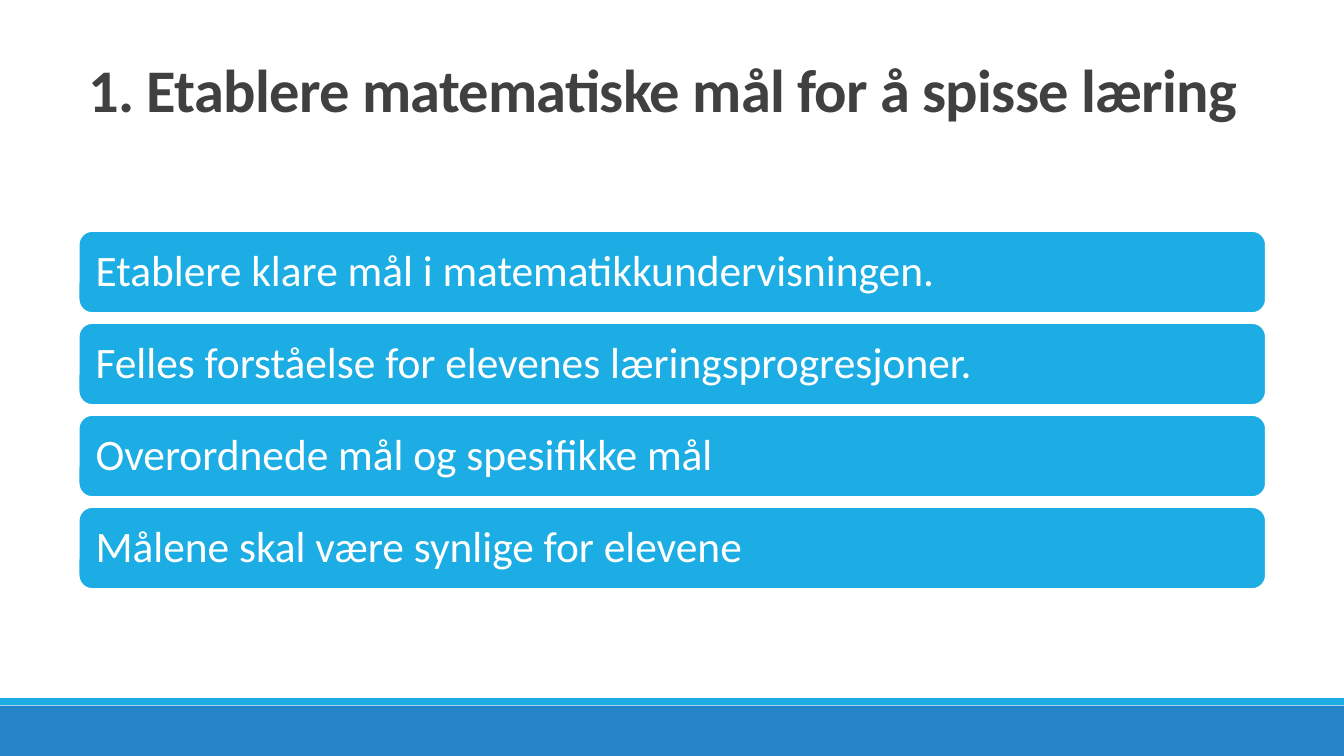
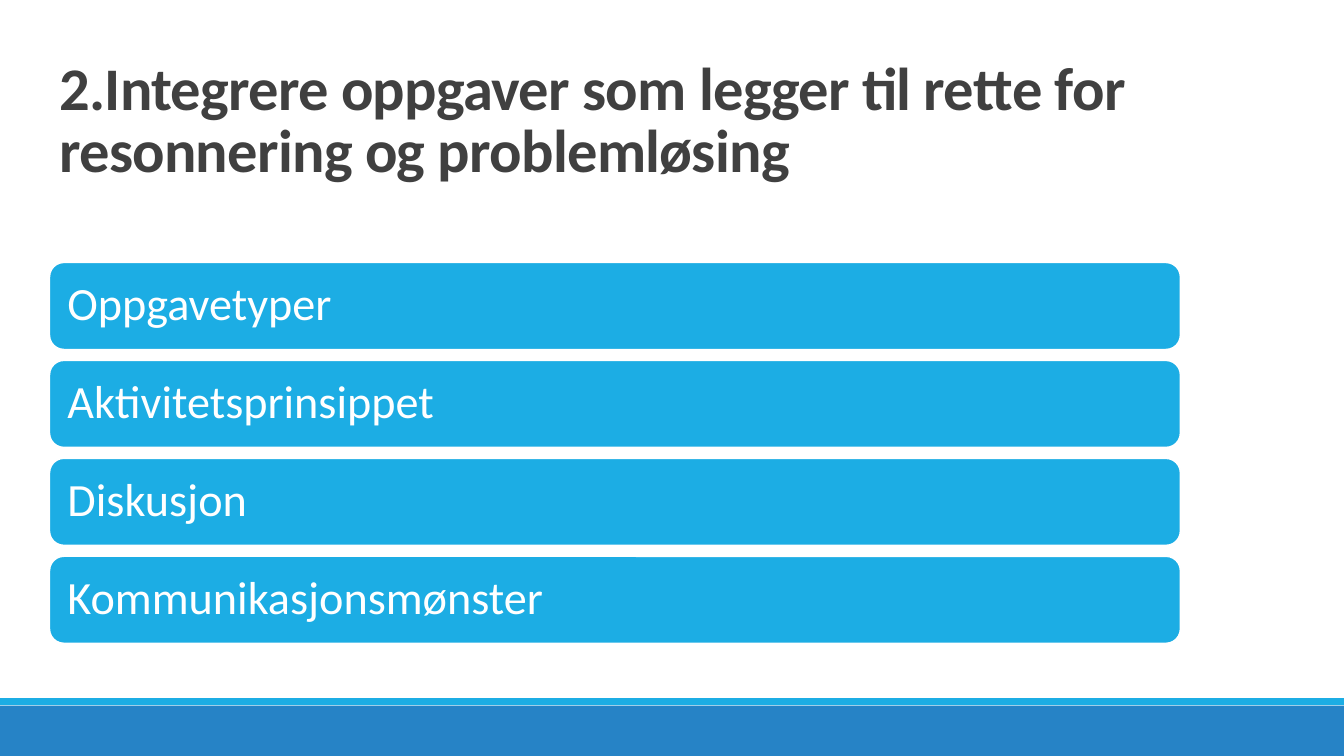
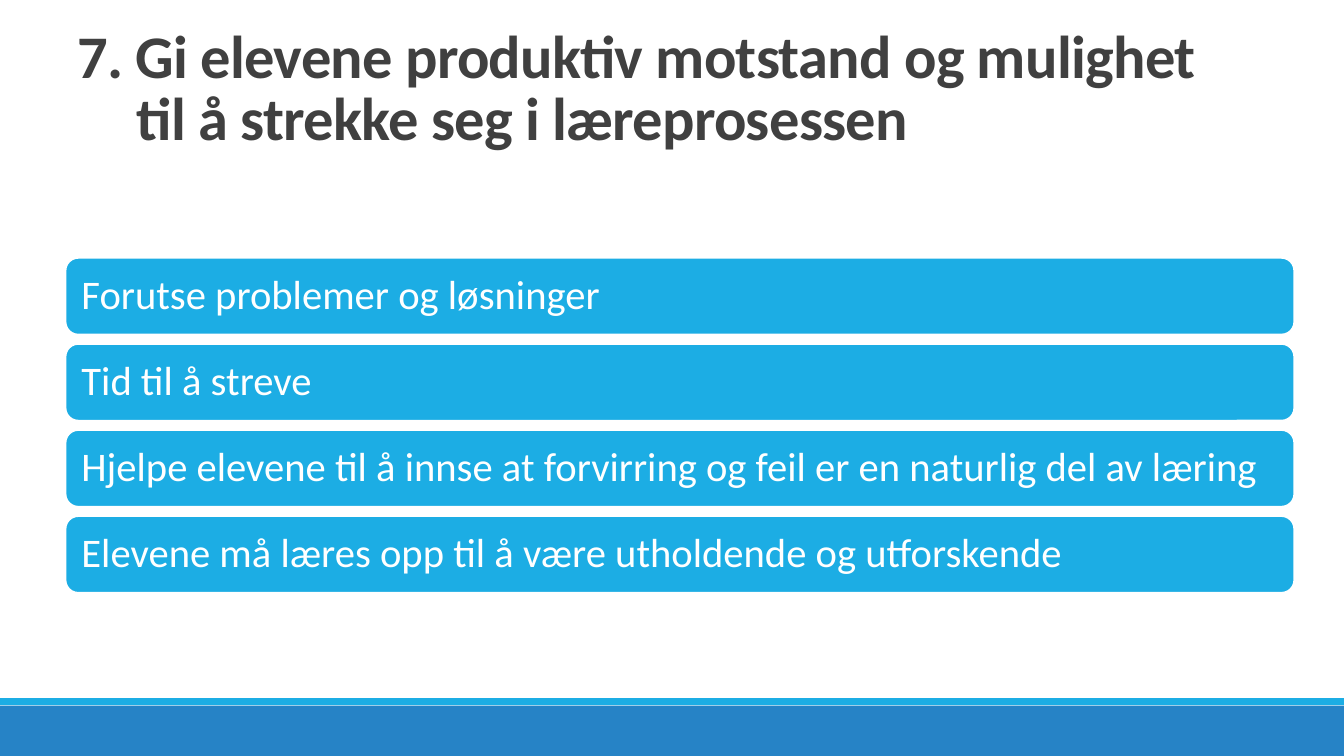
import pptx
import pptx.dml.color
import pptx.enum.shapes
import pptx.enum.text
import pptx.util

Pt = pptx.util.Pt
RGBColor = pptx.dml.color.RGBColor
Shape = pptx.enum.shapes.MSO_SHAPE
Anchor = pptx.enum.text.MSO_ANCHOR
Align = pptx.enum.text.PP_ALIGN

SKY = RGBColor(0x1C, 0xAD, 0xE4)
BLUE = RGBColor(0x26, 0x83, 0xC6)
GREY = RGBColor(0x40, 0x40, 0x40)
WHITE = RGBColor(0xFF, 0xFF, 0xFF)
FONT = "Calibri"
PAGE_WIDTH, PAGE_HEIGHT = 960, 540

# Title box: left, top, width, height; bars: left, top, width.
SLIDES = [
    {
        "title": "1. Etablere matematiske mål for å spisse læring",
        "title_box": (56.2, 43.9, 904, 98.7),
        "bars_box": (56.2, 165, 848),
        "size": 31,
        "bars": [
            "Etablere klare mål i matematikkundervisningen.",
            "Felles forståelse for elevenes læringsprogresjoner.",
            "Overordnede mål og spesifikke mål",
            "Målene skal være synlige for elevene",
        ],
    },
    {
        "title": "2.Integrere oppgaver som legger til rette for "
                 "resonnering og problemløsing",
        "title_box": (35.3, 70.6, 849.6, 114.5),
        "bars_box": (35.3, 187.4, 808),
        "size": 33,
        "bars": [
            "Oppgavetyper",
            "Aktivitetsprinsippet",
            "Diskusjon",
            "Kommunikasjonsmønster",
        ],
    },
    {
        "title": "7. Gi elevene produktiv motstand og mulighet "
                 "til å strekke seg i læreprosessen",
        "title_box": (48.2, 84.2, 852.5, 78.5),
        "title_indent": 42.5,
        "bars_box": (46.8, 184.2, 877.7),
        "size": 29,
        "bars": [
            "Forutse problemer og løsninger",
            "Tid til å streve",
            "Hjelpe elevene til å innse at forvirring og feil "
            "er en naturlig del av læring",
            "Elevene må læres opp til å være utholdende og utforskende",
        ],
    },
]


def add_block(page, kind, box, fill):
    block = page.shapes.add_shape(kind, *map(Pt, box))
    block.shadow.inherit = False
    block.fill.solid()
    block.fill.fore_color.rgb = fill
    block.line.fill.background()
    return block


def set_font(para, size, colour, bold=False):
    font = para.font
    font.name, font.size, font.bold = FONT, Pt(size), bold
    font.color.rgb = colour


def set_margins(frame, left, top, right, bottom):
    frame.margin_left, frame.margin_top = Pt(left), Pt(top)
    frame.margin_right, frame.margin_bottom = Pt(right), Pt(bottom)


def add_footer_bands(page):
    add_block(page, Shape.RECTANGLE, (0, 504, PAGE_WIDTH, 36), BLUE)
    add_block(page, Shape.RECTANGLE, (0, 498.76, PAGE_WIDTH, 5.04), SKY)


def add_title(page, text, box, indent=0):
    """Bottom-anchored title, raised one line above the foot of its box."""
    frame = page.shapes.add_textbox(*map(Pt, box)).text_frame
    frame.word_wrap = True
    frame.vertical_anchor = Anchor.BOTTOM
    set_margins(frame, 7.2, 3.6, 7.2, 53.4)
    para = frame.paragraphs[0]
    para.line_spacing = 0.85
    set_font(para, 43.2, GREY, bold=True)
    if indent:
        properties = para._p.get_or_add_pPr()
        properties.set("marL", str(Pt(indent)))
        properties.set("indent", str(-Pt(indent)))
    span = para.add_run()
    span.text = text
    span._r.get_or_add_rPr().set("spc", "-50")


def add_bars(page, texts, box, size):
    """Stack of equal bars whose height, gap and padding follow the text size."""
    left, top, width = box
    height, gap, padding = 1.89 * size, 0.23 * size, 0.3 * size
    for row, text in enumerate(texts):
        bar_box = (left, top + row * (height + gap), width, height)
        bar = add_block(page, Shape.ROUNDED_RECTANGLE, bar_box, SKY)
        bar.line.color.rgb = WHITE
        bar.line.width = Pt(1.25)
        frame = bar.text_frame
        frame.word_wrap = True
        frame.vertical_anchor = Anchor.MIDDLE
        set_margins(frame, padding, padding, padding, padding)
        para = frame.paragraphs[0]
        para.text = text
        para.alignment = Align.LEFT
        para.line_spacing = 0.9
        set_font(para, size, WHITE)


def main():
    deck = pptx.Presentation()
    deck.slide_width, deck.slide_height = Pt(PAGE_WIDTH), Pt(PAGE_HEIGHT)
    for content in SLIDES:
        page = deck.slides.add_slide(deck.slide_layouts[6])
        add_footer_bands(page)
        add_title(page, content["title"], content["title_box"],
                  content.get("title_indent", 0))
        add_bars(page, content["bars"], content["bars_box"], content["size"])
    deck.save("out.pptx")


if __name__ == "__main__":
    main()
